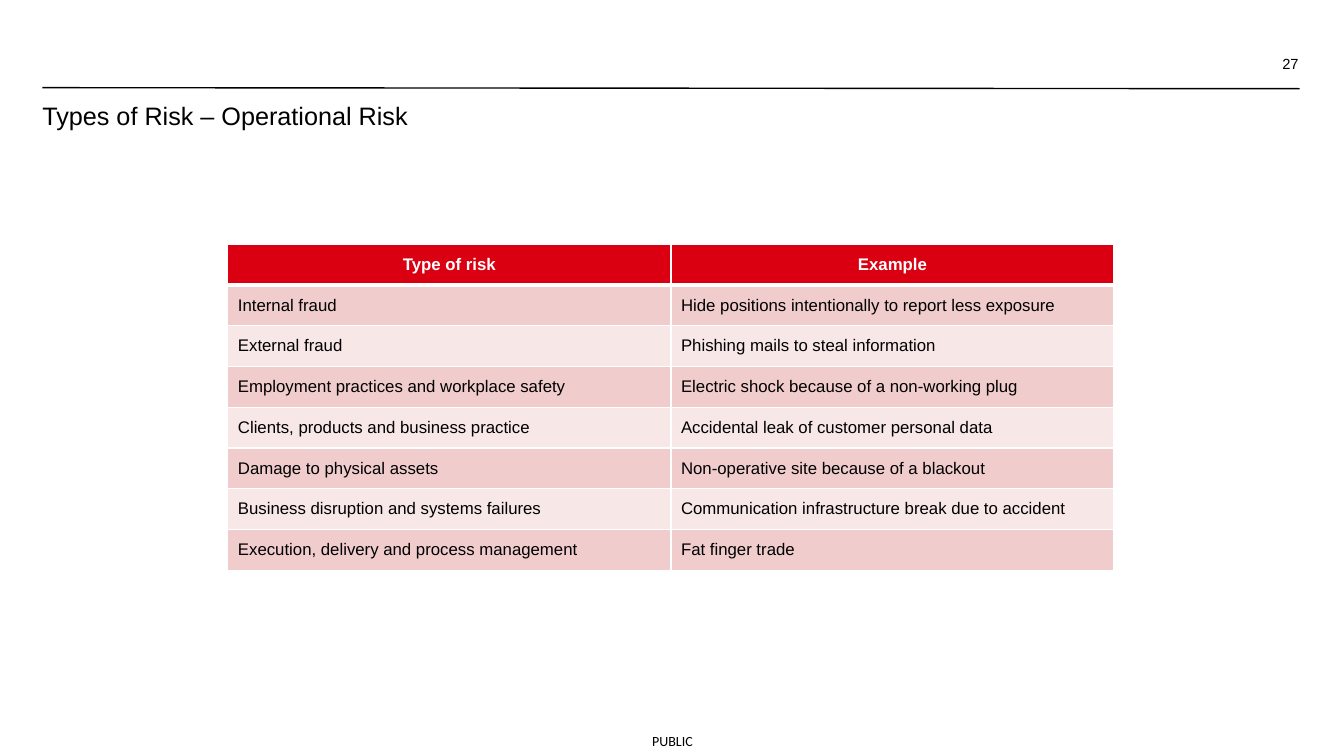
from lxml import etree
from pptx import Presentation
from pptx.dml.color import RGBColor
from pptx.enum import shapes, text
from pptx.oxml import ns
from pptx.util import Inches, Pt

# Content
TITLE = "Types of Risk – Operational Risk"
PAGE_NUMBER = "27"
CLASSIFICATION = "PUBLIC"
RISKS = [
    ("Type of risk", "Example"),
    ("Internal fraud", "Hide positions intentionally to report less exposure"),
    ("External fraud", "Phishing mails to steal information"),
    ("Employment practices and workplace safety", "Electric shock because of a non-working plug"),
    ("Clients, products and business practice", "Accidental leak of customer personal data"),
    ("Damage to physical assets", "Non-operative site because of a blackout"),
    ("Business disruption and systems failures", "Communication infrastructure break due to accident"),
    ("Execution, delivery and process management", "Fat finger trade"),
]
COLORS = {"ink": "000000", "white": "FFFFFF", "header": "DB0011",
          "band_dark": "F1CCCC", "band_light": "F8E7E7"}
ALIGN = text.PP_ALIGN
THIN, THICK = 0.96, 3


def rgb(name):
    return RGBColor.from_string(COLORS[name])


def style(paragraph, size, align=ALIGN.LEFT, font="Arial", color="ink", bold=False):
    paragraph.alignment = align
    for run in paragraph.runs:
        run.font.name, run.font.size, run.font.bold = font, Pt(size), bold
        run.font.color.rgb = rgb(color)


def add_label(words, box, size, anchor=text.MSO_ANCHOR.TOP, **look):
    frame = slide.shapes.add_textbox(*map(Inches, box)).text_frame
    frame.margin_left = frame.margin_right = frame.margin_top = frame.margin_bottom = 0
    frame.word_wrap = True
    frame.vertical_anchor = anchor
    frame.text = words
    style(frame.paragraphs[0], size, **look)


def add_borders(cell, widths):
    properties = cell._tc.get_or_add_tcPr()
    for side, width in widths.items():
        line = etree.SubElement(properties, ns.qn(f"a:ln{side}"), w=str(Pt(width)))
        fill = etree.SubElement(line, ns.qn("a:solidFill"))
        etree.SubElement(fill, ns.qn("a:srgbClr"), val=COLORS["white"])


deck = Presentation()
deck.slide_width, deck.slide_height = Inches(13.33), Inches(7.5)
slide = deck.slides.add_slide(deck.slide_layouts[6])

# Header rule
rule = slide.shapes.add_connector(shapes.MSO_CONNECTOR.STRAIGHT,
                                  *map(Inches, (0.42, 0.87, 12.89, 0.88)))
rule.line.color.rgb = rgb("ink")
rule.line.width = Pt(1)
etree.SubElement(rule._element.spPr, ns.qn("a:effectLst"))

# Footer, title and page number
add_label(CLASSIFICATION, (6.32, 7.27, 0.7, 0.17), 10,
          anchor=text.MSO_ANCHOR.MIDDLE, align=ALIGN.CENTER, font="Calibri")
add_label(TITLE, (0.42, 0.99, 12.47, 0.35), 18)
add_label(PAGE_NUMBER, (9.91, 0.54, 2.97, 0.33), 10.5, align=ALIGN.RIGHT)

# Risk table: header row, then alternating bands
risk_table = slide.shapes.add_table(len(RISKS), len(RISKS[0]),
                                    *map(Inches, (2.26, 2.42, 8.79, 3.24))).table
for r, row in enumerate(RISKS):
    is_header = r == 0
    band = "header" if is_header else "band_dark" if r % 2 else "band_light"
    for c, words in enumerate(row):
        cell = risk_table.cell(r, c)
        cell.text = words
        cell.vertical_anchor = text.MSO_ANCHOR.MIDDLE
        style(cell.text_frame.paragraphs[0], 12, bold=is_header,
              align=ALIGN.CENTER if is_header else ALIGN.LEFT,
              color="white" if is_header else "ink")
        add_borders(cell, {"L": THIN, "R": THIN, "T": THICK if r == 1 else THIN,
                           "B": THICK if is_header else THIN})
        cell.fill.solid()
        cell.fill.fore_color.rgb = rgb(band)

deck.save("out.pptx")
